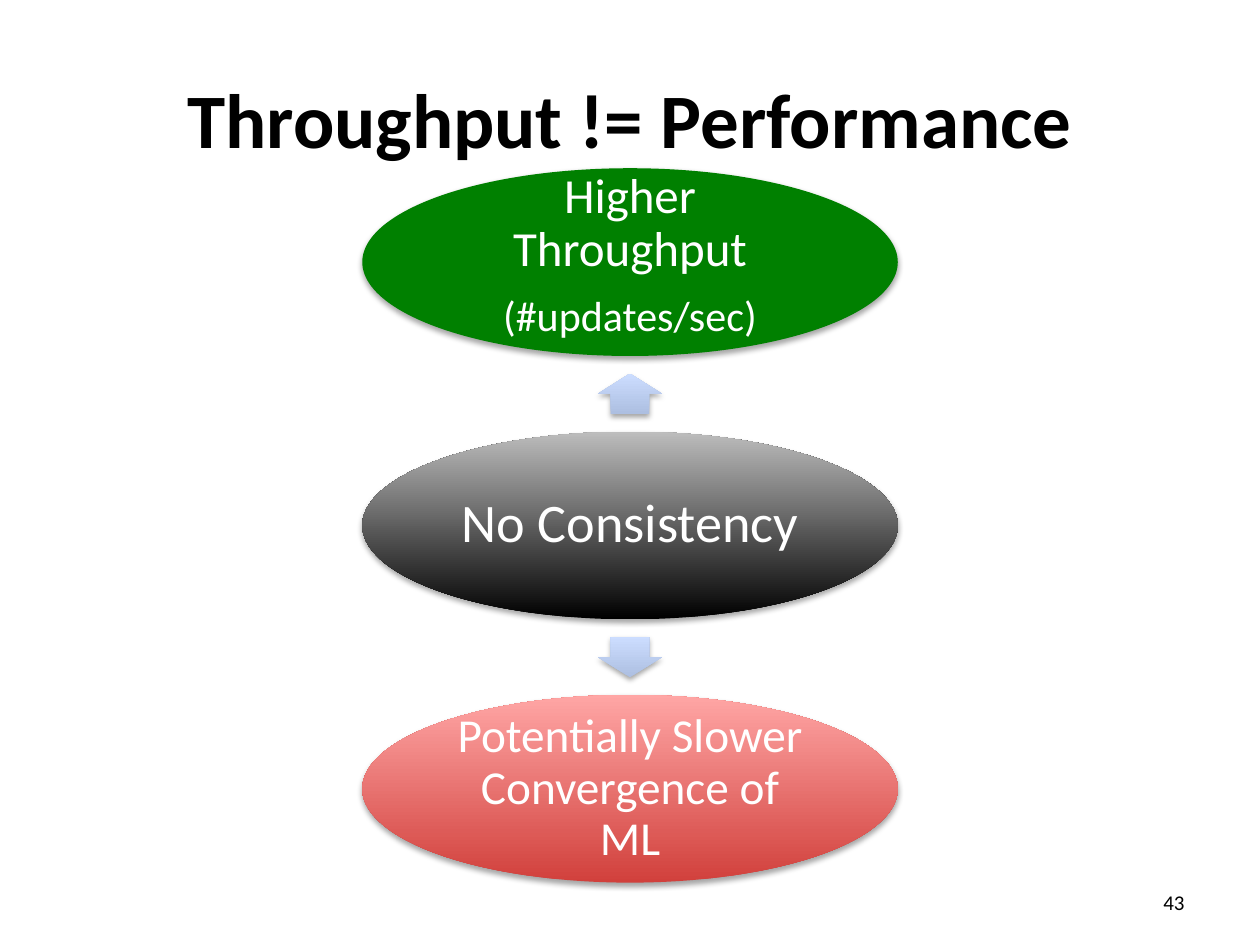
from dataclasses import dataclass

from lxml import etree
from pptx import Presentation
from pptx.dml.color import RGBColor
from pptx.enum.shapes import MSO_SHAPE
from pptx.enum.text import MSO_ANCHOR, PP_ALIGN
from pptx.oxml.ns import qn
from pptx.util import Inches, Pt

OVAL, UP, DOWN = MSO_SHAPE.OVAL, MSO_SHAPE.UP_ARROW, MSO_SHAPE.DOWN_ARROW
MIDDLE = MSO_ANCHOR.MIDDLE
CENTER, RIGHT = PP_ALIGN.CENTER, PP_ALIGN.RIGHT

SLIDE_W, SLIDE_H = 10, 7.5
CENTER_X, CENTER_Y = 5, 4.17
ROW_PITCH = 2.09
OVAL_W, OVAL_H = 4.25, 1.49
ARROW_W, ARROW_H = 0.51, 0.32
INSET = 0.04
FONT = "Calibri"
BLACK, WHITE = "000000", "FFFFFF"
ARROW_COLORS = ("ADBFE1", "CCDDFF")


@dataclass(frozen=True)
class Stage:
    row: float  # rows below the middle of the diagram
    colors: tuple[str, ...]  # from bottom to top
    lines: tuple[tuple[str, float], ...]  # wording and size in points
    lift: float = 0  # extra bottom inset in inches


@dataclass(frozen=True)
class Arrow:
    row: float
    preset: MSO_SHAPE


STAGES = (
    Stage(0, (BLACK, "BDBDBD"), (("No Consistency", 31),)),
    Stage(-1, ("008000",), (("Higher Throughput", 28), ("(#updates/sec)", 24)), 0.1),
    Stage(1, ("D1403C", "FFA6A5"), (("Potentially Slower Convergence of ML", 27),)),
)
ARROWS = (Arrow(-0.5, UP), Arrow(0.5, DOWN))


def rgb(color: str) -> RGBColor:
    return RGBColor.from_string(color)


def paint(shape, colors: tuple[str, ...]) -> None:
    """Fill with one colour, or with a gradient rising from the first to the second."""
    if len(colors) == 1:
        shape.fill.solid()
        shape.fill.fore_color.rgb = rgb(colors[0])
    else:
        shape.fill.gradient()
        shape.fill.gradient_angle = 90
        for stop, color in zip(shape.fill.gradient_stops, colors):
            stop.color.rgb = rgb(color)
    shape.line.fill.background()


def cast_shadow(shape) -> None:
    shape.shadow.inherit = False
    effects = shape._element.spPr.find(qn("a:effectLst"))
    shadow = etree.SubElement(
        effects, qn("a:outerShdw"), blurRad=str(Pt(3.1)), dist=str(Pt(1.8)),
        dir="5400000", rotWithShape="0")
    color = etree.SubElement(shadow, qn("a:srgbClr"), val=BLACK)
    etree.SubElement(color, qn("a:alpha"), val="35000")


def style_paragraph(paragraph, size: float, color: str, align: PP_ALIGN,
                    bold: bool = False) -> None:
    paragraph.alignment = align
    for run in paragraph.runs:
        run.font.name = FONT
        run.font.size = Pt(size)
        run.font.bold = bold
        run.font.color.rgb = rgb(color)


def add_diagram_shape(slide, preset: MSO_SHAPE, row: float, width: float,
                      height: float, colors: tuple[str, ...]):
    """Add a shape centred on the given row of the diagram's only column."""
    left = CENTER_X - width / 2
    top = CENTER_Y + row * ROW_PITCH - height / 2
    shape = slide.shapes.add_shape(
        preset, Inches(left), Inches(top), Inches(width), Inches(height))
    paint(shape, colors)
    cast_shadow(shape)
    return shape


def add_stage(slide, stage: Stage) -> None:
    oval = add_diagram_shape(slide, OVAL, stage.row, OVAL_W, OVAL_H, stage.colors)
    frame = oval.text_frame
    frame.word_wrap = True
    frame.vertical_anchor = MIDDLE
    frame.margin_left = frame.margin_right = frame.margin_top = Inches(INSET)
    frame.margin_bottom = Inches(INSET + stage.lift)
    frame.text = "\n".join(text for text, _ in stage.lines)
    for paragraph, (_, size) in zip(frame.paragraphs, stage.lines):
        paragraph.line_spacing = 0.9
        paragraph.space_after = Pt(10)
        style_paragraph(paragraph, size, WHITE, CENTER)


def add_arrow(slide, arrow: Arrow) -> None:
    shape = add_diagram_shape(
        slide, arrow.preset, arrow.row, ARROW_W, ARROW_H, ARROW_COLORS)
    shape.adjustments[0] = 0.6
    shape.adjustments[1] = 0.5


def add_label(slide, text: str, left: float, top: float, width: float, height: float,
              size: float, align: PP_ALIGN, bold: bool = False) -> None:
    """Add a one-line text box; its place is given in shares of the slide."""
    box = slide.shapes.add_textbox(
        Inches(left * SLIDE_W), Inches(top * SLIDE_H),
        Inches(width * SLIDE_W), Inches(height * SLIDE_H))
    frame = box.text_frame
    frame.word_wrap = True
    frame.vertical_anchor = MIDDLE
    frame.text = text
    style_paragraph(frame.paragraphs[0], size, BLACK, align, bold)


def main() -> None:
    deck = Presentation()
    deck.slide_width, deck.slide_height = Inches(SLIDE_W), Inches(SLIDE_H)
    slide = deck.slides.add_slide(deck.slide_layouts[6])
    add_label(slide, "Throughput != Performance", 0.05, 0.04, 0.9, 0.17, 44, CENTER, True)
    for stage in STAGES:
        add_stage(slide, stage)
    for arrow in ARROWS:
        add_arrow(slide, arrow)
    add_label(slide, "43", 0.72, 0.93, 0.23, 0.05, 12, RIGHT)
    deck.save("out.pptx")


if __name__ == "__main__":
    main()
